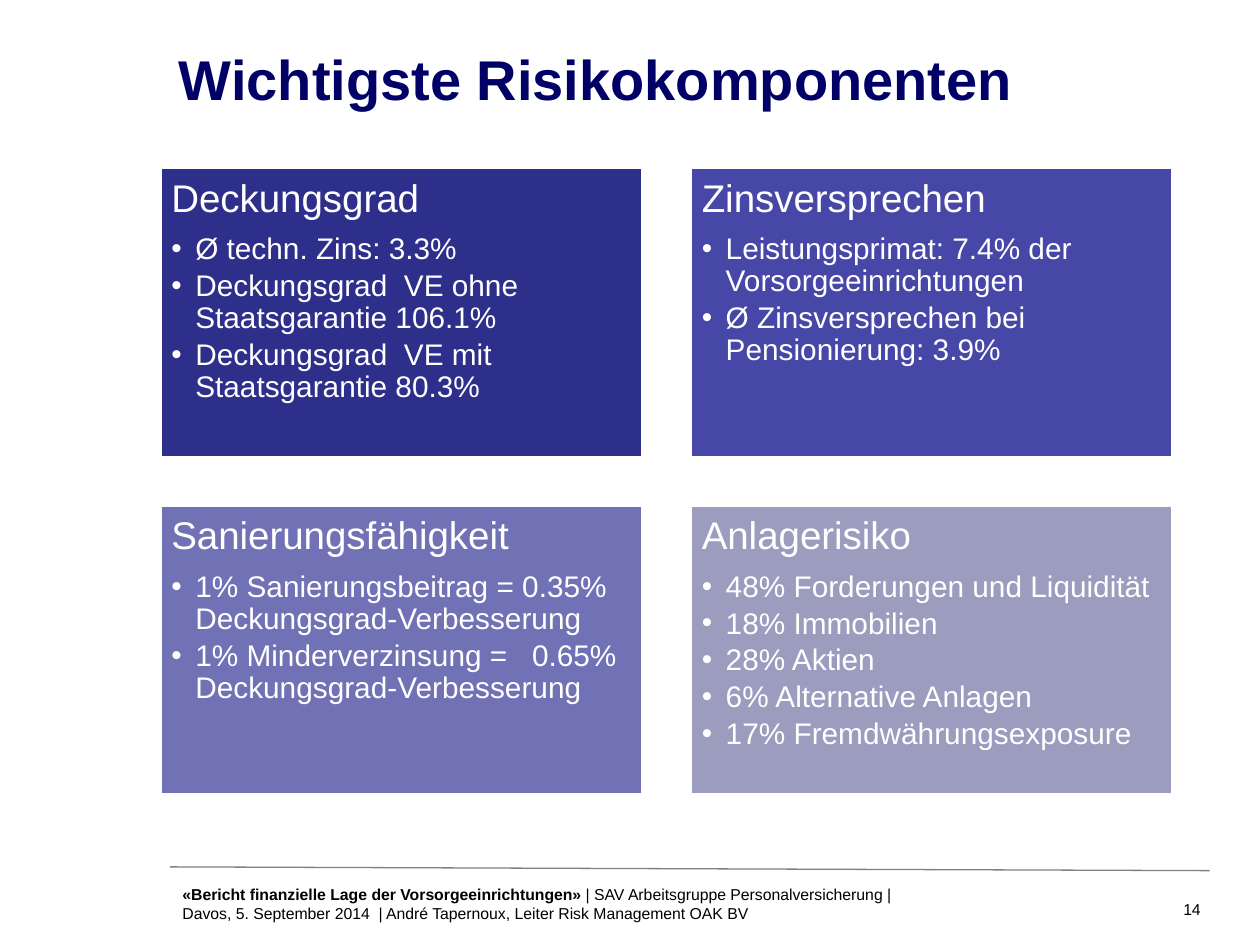
from lxml.etree import SubElement
from pptx import Presentation
from pptx.dml.color import RGBColor
from pptx.enum.shapes import MSO_CONNECTOR, MSO_SHAPE
from pptx.enum.text import MSO_ANCHOR, PP_ALIGN
from pptx.oxml.ns import qn
from pptx.util import Inches, Pt

FONT = "Arial"
WHITE, BLACK, NAVY, GREY = "FFFFFF", "000000", "000066", "808080"

# Card grid
LEFT, TOP = 1.27, 1.33
WIDTH, HEIGHT = 3.83, 2.3
STEP_X, STEP_Y = 4.21, 2.68
INDENT = Inches(0.19)

CARDS = [
    ("Deckungsgrad", "2E2E8B", [
        "Ø techn. Zins: 3.3%",
        "Deckungsgrad  VE ohne Staatsgarantie 106.1%",
        "Deckungsgrad  VE mit Staatsgarantie 80.3%"]),
    ("Zinsversprechen", "4747A8", [
        "Leistungsprimat: 7.4% der Vorsorgeeinrichtungen",
        "Ø Zinsversprechen bei Pensionierung: 3.9%"]),
    ("Sanierungsfähigkeit", "7171B5", [
        "1% Sanierungsbeitrag = 0.35% Deckungsgrad-Verbesserung",
        "1% Minderverzinsung =   0.65% Deckungsgrad-Verbesserung"]),
    ("Anlagerisiko", "9C9CBF", [
        "48% Forderungen und Liquidität",
        "18% Immobilien",
        "28% Aktien",
        "6% Alternative Anlagen",
        "17% Fremdwährungsexposure"]),
]


def color(code):
    return RGBColor.from_string(code)


def add_run(para, text, size, code, bold=False):
    run = para.add_run()
    run.text = text
    font = run.font
    font.name, font.size, font.bold = FONT, Pt(size), bold
    font.color.rgb = color(code)


def set_frame(frame, inset_x, inset_y):
    frame.word_wrap = True
    frame.vertical_anchor = MSO_ANCHOR.TOP
    frame.margin_left = frame.margin_right = Inches(inset_x)
    frame.margin_top = frame.margin_bottom = Inches(inset_y)


def add_bullet(para):
    props = para._p.get_or_add_pPr()
    props.set("marL", str(INDENT))
    props.set("indent", str(-INDENT))
    SubElement(props, qn("a:buFont"), typeface=FONT)
    SubElement(props, qn("a:buChar"), char="•")


def add_title(slide, text):
    title = slide.shapes.title
    title.left, title.top = Inches(1.42), Inches(0.35)
    title.width, title.height = Inches(8.16), Inches(1.08)
    set_frame(title.text_frame, 0, 0)
    para = title.text_frame.paragraphs[0]
    para.alignment = PP_ALIGN.LEFT
    add_run(para, text, 32, NAVY, True)


def add_card(slide, left, top, head, fill, items):
    card = slide.shapes.add_shape(
        MSO_SHAPE.RECTANGLE, Inches(left), Inches(top),
        Inches(WIDTH), Inches(HEIGHT))
    card.shadow.inherit = False
    card.fill.solid()
    card.fill.fore_color.rgb = color(fill)
    card.line.color.rgb = color(WHITE)
    card.line.width = Pt(2)
    frame = card.text_frame
    set_frame(frame, 0.09, 0.09)

    # Heading
    para = frame.paragraphs[0]
    para.alignment = PP_ALIGN.LEFT
    para.line_spacing, para.space_after = 0.9, Pt(7.7)
    add_run(para, head, 22, WHITE)

    # Bullet list
    for item in items:
        para = frame.add_paragraph()
        add_bullet(para)
        para.level, para.alignment = 1, PP_ALIGN.LEFT
        para.line_spacing, para.space_after = 0.9, Pt(2.6)
        add_run(para, item, 17, WHITE)


def add_rule(slide):
    rule = slide.shapes.add_connector(
        MSO_CONNECTOR.STRAIGHT, Inches(9.6), Inches(6.91),
        Inches(1.35), Inches(6.88))
    rule.line.color.rgb = color(GREY)
    rule.line.width = Pt(0.75)
    SubElement(rule._element.spPr, qn("a:effectLst"))


def add_text(slide, box, inset, runs, align=PP_ALIGN.LEFT):
    shape = slide.shapes.add_textbox(*(Inches(n) for n in box))
    set_frame(shape.text_frame, *inset)
    para = shape.text_frame.paragraphs[0]
    para.alignment = align
    for text, bold in runs:
        add_run(para, text, 9, BLACK, bold)


def main():
    deck = Presentation()
    deck.slide_width, deck.slide_height = Inches(10), Inches(7.5)
    slide = deck.slides.add_slide(deck.slide_layouts[5])

    add_title(slide, "Wichtigste Risikokomponenten")

    # Risk cards, two per row
    for i, (head, fill, items) in enumerate(CARDS):
        row, col = divmod(i, 2)
        add_card(slide, LEFT + col * STEP_X, TOP + row * STEP_Y,
                 head, fill, items)

    # Footer
    add_rule(slide)
    add_text(slide, (1.35, 6.97, 6.03, 0.4), (0.1, 0.05), [
        ("«Bericht finanzielle Lage der Vorsorgeeinrichtungen» ", True),
        ("| SAV Arbeitsgruppe Personalversicherung | Davos, "
         "5. September 2014  | André Tapernoux, "
         "Leiter Risk Management OAK BV", False)])
    add_text(slide, (9.17, 7.14, 0.36, 0.16), (0, 0),
             [("14", False)], PP_ALIGN.RIGHT)

    deck.save("out.pptx")


if __name__ == "__main__":
    main()
